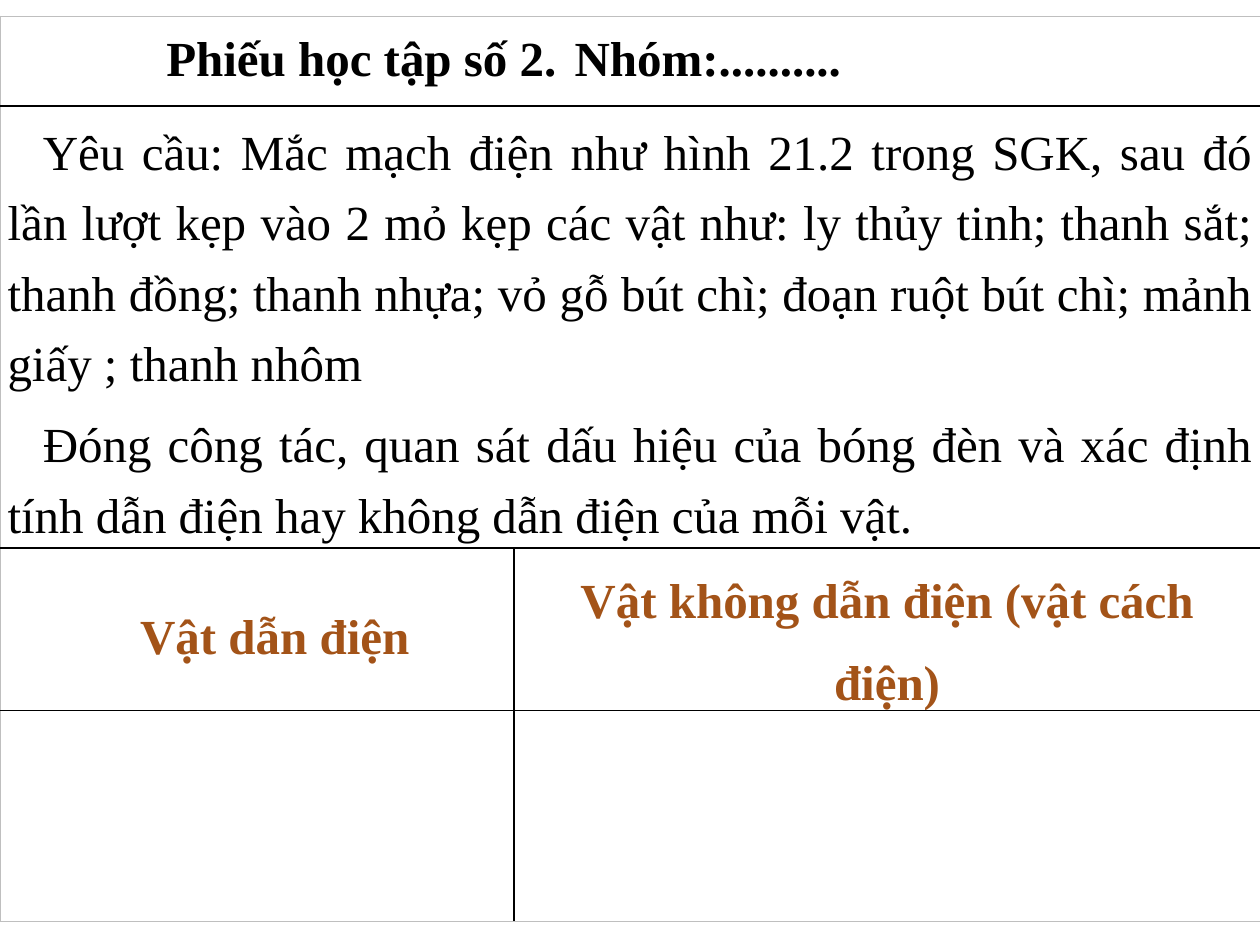
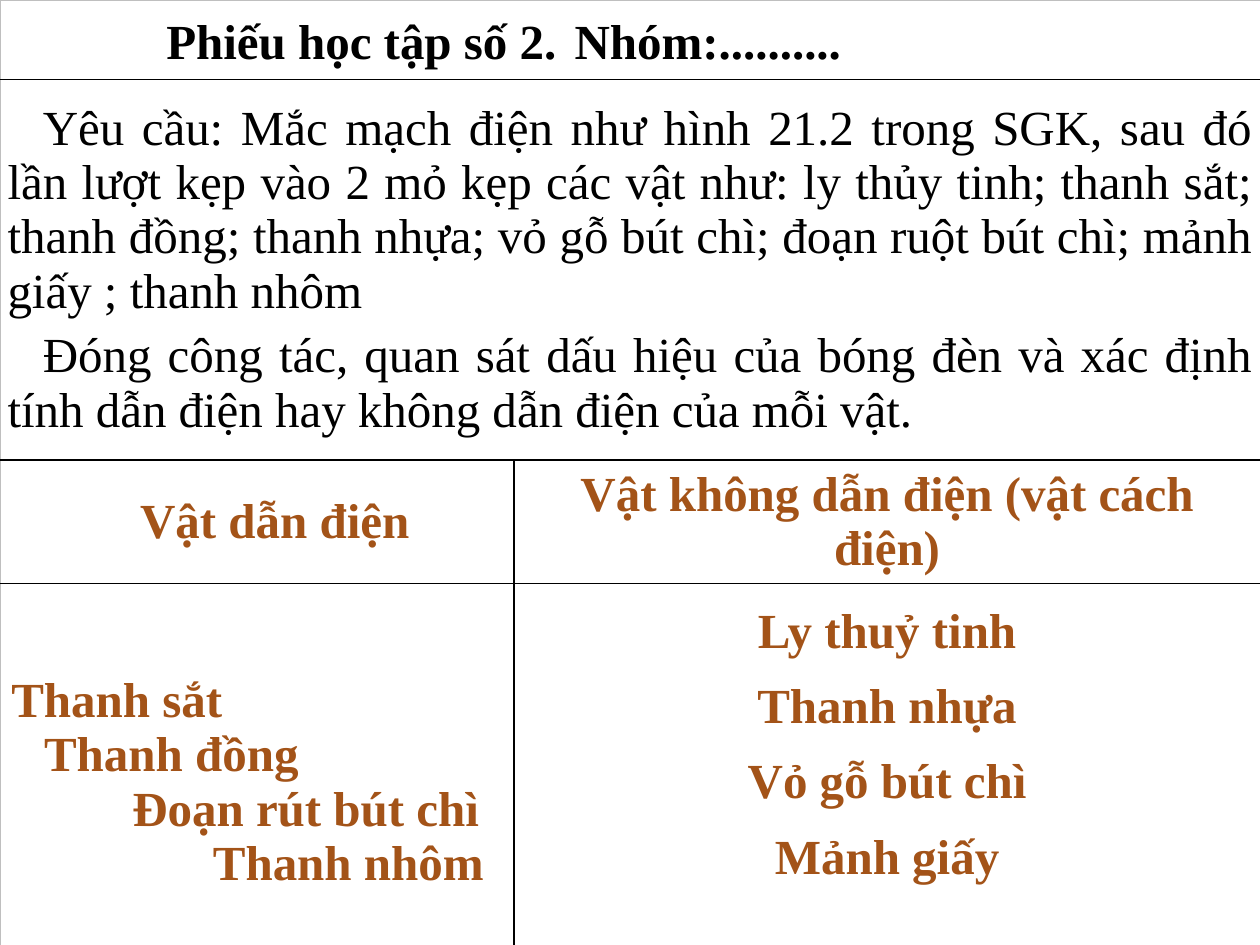
from pptx import Presentation
from pptx.dml.color import RGBColor
from pptx.enum.text import MSO_ANCHOR, PP_ALIGN
from pptx.oxml.ns import qn
from pptx.util import Inches, Pt
from lxml.etree import SubElement

LEFT, MID, JUST = PP_ALIGN.LEFT, PP_ALIGN.CENTER, PP_ALIGN.JUSTIFY
TOP, MIDDLE = MSO_ANCHOR.TOP, MSO_ANCHOR.MIDDLE
FONT, SIZE = "Times New Roman", 28
BLACK, WHITE, BROWN, GRAY = "000000", "FFFFFF", "A35318", "BFBFBF"
INDENT = 0.28
COLS = [4.08, 5.92]

TITLE = "Phiếu học tập số 2.\tNhóm:.........."
TASKS = [
    "Yêu cầu: Mắc mạch điện như hình 21.2 trong SGK, sau đó lần lượt kẹp vào "
    "2 mỏ kẹp các vật như: ly thủy tinh; thanh sắt; thanh đồng; thanh nhựa; "
    "vỏ gỗ bút chì; đoạn ruột bút chì; mảnh giấy ; thanh nhôm",
    "Đóng công tác, quan sát dấu hiệu của bóng đèn và xác định tính dẫn điện "
    "hay không dẫn điện của mỗi vật.",
]
HEADS = ["Vật dẫn điện", "Vật không dẫn điện (vật cách điện)"]
METALS = [("Thanh sắt", 0.03), ("Thanh đồng", 0.29),
          ("Đoạn rút bút chì", 0.99), ("Thanh nhôm", 1.63)]
OTHERS = ["Ly thuỷ tinh", "Thanh nhựa", "Vỏ gỗ bút chì", "Mảnh giấy"]


def rgb(code):
    return RGBColor.from_string(code)


def write(cell, texts, color=BROWN, bold=True, align=MID, anchor=MIDDLE,
          indent=0, line=1.0, before=0, after=6):
    frame = cell.text_frame
    frame.text = "\n".join(texts)
    cell.vertical_anchor = anchor
    for para in frame.paragraphs:
        para.alignment, para.line_spacing = align, line
        para.space_before, para.space_after = Pt(before), Pt(after)
        props = para._p.get_or_add_pPr()
        props.set("marL", "0")
        props.set("indent", str(Inches(indent)))
        for run in para.runs:
            font = run.font
            font.name, font.size, font.bold = FONT, Pt(SIZE), bold
            font.color.rgb = rgb(color)
    return frame.paragraphs


def edge(cell, side, color, width):
    line = SubElement(cell._tc.get_or_add_tcPr(), qn("a:ln" + side))
    line.set("w", str(Pt(width)))
    fill = SubElement(line, qn("a:solidFill"))
    SubElement(fill, qn("a:srgbClr")).set("val", color)


def frame_cells(table, fill):
    """Rule black lines inside the table and a pale hairline around it."""
    last = len(table.rows) - 1
    for r in range(last + 1):
        for c in range(2):
            cell = table.cell(r, c)
            wide = r < 2
            outer = {"L": c == 0 or wide, "R": c == 1 or wide,
                     "T": r == 0, "B": r == last}
            for side, out in outer.items():
                edge(cell, side, GRAY if out else BLACK, 0.5 if out else 1)
            if fill:
                cell.fill.solid()
                cell.fill.fore_color.rgb = rgb(fill)
            else:
                cell.fill.background()
            cell.margin_left = cell.margin_right = Inches(0.06)
            cell.margin_top = cell.margin_bottom = 0


def add_title(cell):
    para = write(cell, [TITLE], BLACK, align=LEFT, anchor=TOP,
                 indent=1.26, line=1.3)[0]
    tabs = SubElement(para._p.get_or_add_pPr(), qn("a:tabLst"))
    tab = SubElement(tabs, qn("a:tab"))
    tab.set("pos", str(Inches(6.78)))
    tab.set("algn", "l")


def add_sheet(deck, top, rows, line, head_line, fill=None):
    slide = deck.slides.add_slide(deck.slide_layouts[6])
    table = slide.shapes.add_table(
        len(rows), 2, 0, Inches(top), Inches(sum(COLS)), Inches(sum(rows))).table
    table.first_row = table.horz_banding = False
    for col, width in zip(table.columns, COLS):
        col.width = Inches(width)
    for row, height in zip(table.rows, rows):
        row.height = Inches(height)
    for r in range(2):
        table.cell(r, 0).merge(table.cell(r, 1))
    frame_cells(table, fill)
    add_title(table.cell(0, 0))
    write(table.cell(1, 0), TASKS, BLACK, False, JUST, indent=INDENT, line=line)
    write(table.cell(2, 0), HEADS[:1], indent=INDENT, line=line)
    write(table.cell(2, 1), HEADS[1:], line=head_line, before=27, after=3)
    return table


def add_answers(table):
    left, right = table.cell(3, 0), table.cell(3, 1)
    paras = write(left, [name for name, _ in METALS], align=LEFT, after=0)
    for para, (_, shift) in zip(paras, METALS):
        para._p.get_or_add_pPr().set("marL", str(Inches(shift)))
    write(right, OTHERS, before=6)
    right.margin_bottom = Inches(0.6)


def main():
    deck = Presentation()
    deck.slide_width, deck.slide_height = Inches(10), Inches(7.5)
    add_sheet(deck, 0.13, [0.71, 3.51, 1.24, 1.67], 1.3, 1.5)
    solved = add_sheet(deck, 0, [0.63, 3.02, 0.98, 3.16], 1.0, 1.0, WHITE)
    add_answers(solved)
    deck.save("out.pptx")


if __name__ == "__main__":
    main()
